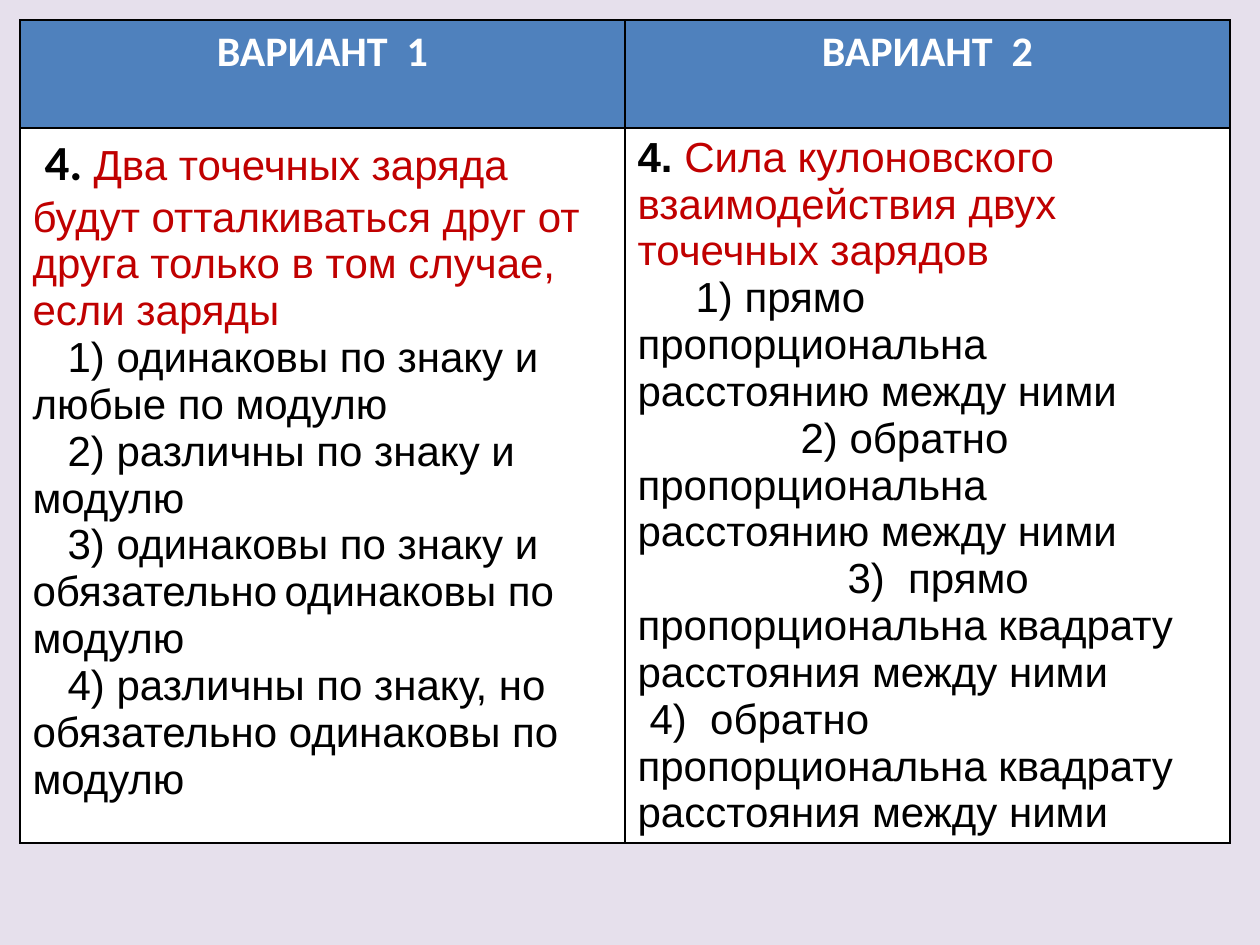
from dataclasses import dataclass

from lxml.etree import SubElement
from pptx import Presentation
from pptx.dml.color import RGBColor
from pptx.enum.text import PP_ALIGN
from pptx.oxml.ns import qn
from pptx.util import Emu, Pt

PX_PER_INCH = 126


@dataclass(frozen=True)
class Theme:
    background: str = "E6E0EC"
    header: str = "4F81BD"
    body: str = "FFFFFF"
    light: str = "FFFFFF"
    ink: str = "000000"
    question: str = "C00000"
    text_size: int = 24
    number_size: int = 28
    border_points: int = 1


THEME = Theme()
HEADING = {"name": "Calibri", "size": THEME.text_size, "bold": True, "color": THEME.light}
BIG_NUMBER = {"name": "Calibri", "size": THEME.number_size, "bold": True, "color": THEME.ink}
ANSWER = {"name": "Arial", "size": THEME.text_size, "bold": False, "color": THEME.ink}
NUMBER = {**ANSWER, "bold": True}
QUESTION = {**ANSWER, "color": THEME.question}

HEADINGS = ["ВАРИАНТ  1", "ВАРИАНТ  2"]

# Each paragraph: first-line indent in px, then its (text, format) spans
VARIANT_1 = [
    (12, [("4. ", BIG_NUMBER),
          ("Два точечных заряда будут отталкиваться друг от друга "
           "только в том случае, если заряды", QUESTION)]),
    (35, [("1) одинаковы по знаку и любые по модулю", ANSWER)]),
    (35, [("2) различны по знаку и модулю", ANSWER)]),
    (35, [("3) одинаковы по знаку и обязательно\tодинаковы по модулю", ANSWER)]),
    (35, [("4) различны по знаку, но обязательно одинаковы по модулю", ANSWER)]),
]
VARIANT_2 = [
    (0, [("4. ", NUMBER),
         ("Сила кулоновского взаимодействия двух точечных зарядов", QUESTION)]),
    (58, [("1) прямо пропорциональна расстоянию между ними", ANSWER)]),
    (163, [("2) обратно пропорциональна расстоянию между ними", ANSWER)]),
    (210, [("3)  прямо пропорциональна квадрату расстояния между ними", ANSWER)]),
    (12, [("4)  обратно пропорциональна квадрату расстояния между ними", ANSWER)]),
]
TAB_STOP = 291


def px(length):
    return Emu(round(length * 914400 / PX_PER_INCH))


def add_span(para, text, style):
    span = para.add_run()
    span.text = text
    values = {"name": style["name"], "size": Pt(style["size"]), "bold": style["bold"]}
    for key, value in values.items():
        setattr(span.font, key, value)
    span.font.color.rgb = RGBColor.from_string(style["color"])


def indent_first_line(para, indent, has_tab):
    properties = para._p.get_or_add_pPr()
    properties.set("marL", "0")
    properties.set("indent", str(px(indent)))
    if has_tab:
        stops = SubElement(properties, qn("a:tabLst"))
        SubElement(stops, qn("a:tab"), pos=str(px(TAB_STOP)), algn="l")


def style_cell(cell, color):
    properties = cell._tc.get_or_add_tcPr()
    for side in ("L", "R", "T", "B"):
        line = SubElement(properties, qn(f"a:ln{side}"), w=str(Pt(THEME.border_points)))
        fill = SubElement(line, qn("a:solidFill"))
        SubElement(fill, qn("a:srgbClr"), val=THEME.ink)
    cell.fill.solid()
    cell.fill.fore_color.rgb = RGBColor.from_string(color)


def fill_header(cell, text):
    style_cell(cell, THEME.header)
    para = cell.text_frame.paragraphs[0]
    para.alignment = PP_ALIGN.CENTER
    add_span(para, text, HEADING)


def fill_variant(cell, paragraphs):
    style_cell(cell, THEME.body)
    frame = cell.text_frame
    for index, (indent, spans) in enumerate(paragraphs):
        para = frame.add_paragraph() if index else frame.paragraphs[0]
        indent_first_line(para, indent, any("\t" in text for text, _ in spans))
        for text, style in spans:
            add_span(para, text, style)


def add_variant_table(page):
    column_width, row_heights = 605, (108, 715)
    table = page.shapes.add_table(
        2, 2, px(20), px(20), px(2 * column_width), px(sum(row_heights))).table
    for column in table.columns:
        column.width = px(column_width)
    for row, height in zip(table.rows, row_heights):
        row.height = px(height)
    for index, (heading, variant) in enumerate(zip(HEADINGS, (VARIANT_1, VARIANT_2))):
        fill_header(table.cell(0, index), heading)
        fill_variant(table.cell(1, index), variant)


def main():
    deck = Presentation()
    deck.slide_width, deck.slide_height = px(1260), px(945)
    page = deck.slides.add_slide(deck.slide_layouts[6])

    # Background
    page.background.fill.solid()
    page.background.fill.fore_color.rgb = RGBColor.from_string(THEME.background)

    # Two test variants side by side
    add_variant_table(page)
    deck.save("out.pptx")


if __name__ == "__main__":
    main()
